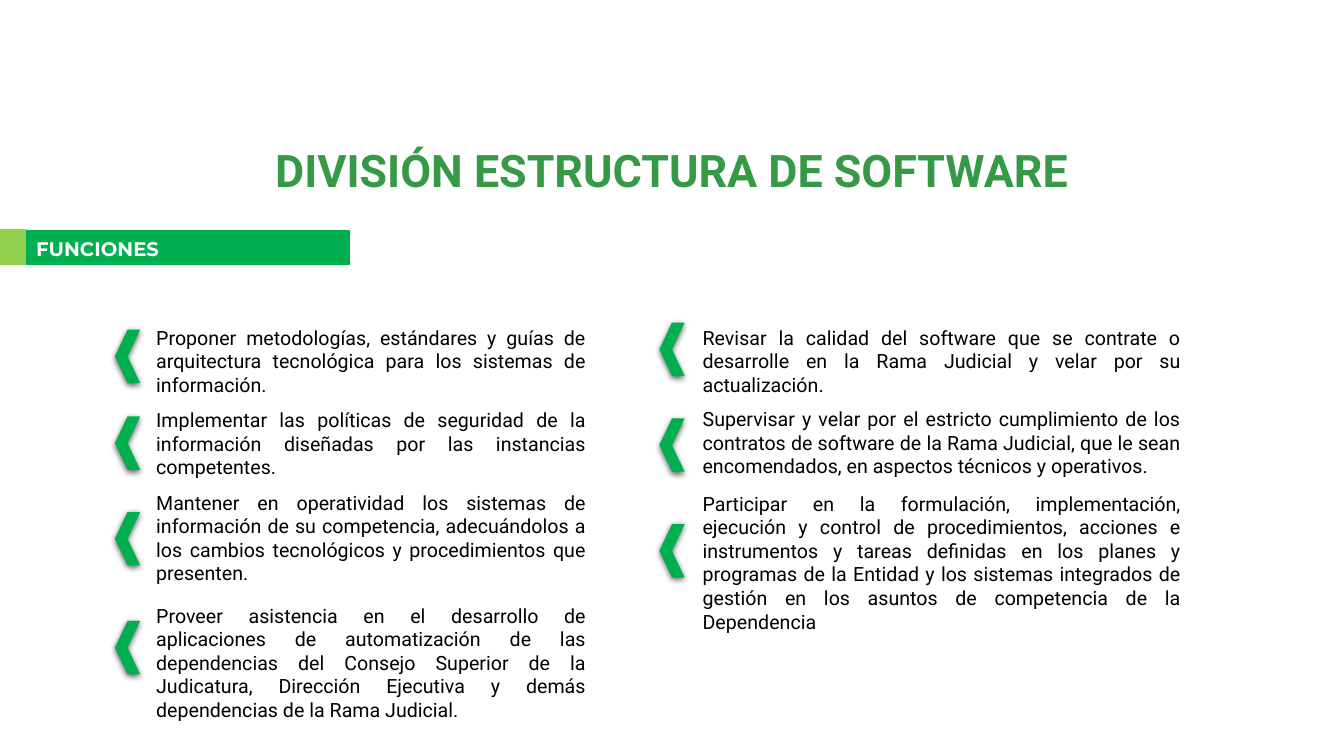
from dataclasses import dataclass

from lxml.etree import SubElement
from pptx import Presentation
from pptx.dml.color import RGBColor
from pptx.enum.shapes import MSO_SHAPE
from pptx.enum.text import MSO_ANCHOR, MSO_AUTO_SIZE, PP_ALIGN
from pptx.oxml.ns import qn
from pptx.util import Inches, Pt


@dataclass(frozen=True)
class Theme:
    green: str = "00B050"
    lime: str = "92D050"
    title: str = "359946"
    text: str = "000000"
    light: str = "FFFFFF"
    body_font: str = "Roboto"
    label_font: str = "Montserrat"
    title_size: int = 32
    body_size: int = 14


@dataclass(frozen=True)
class Box:
    """Left, top, width and height in percent of the slide's size."""
    left: float
    top: float
    width: float
    height: float

    def emu(self) -> tuple[int, int, int, int]:
        return (int(WIDTH * self.left / 100), int(HEIGHT * self.top / 100),
                int(WIDTH * self.width / 100), int(HEIGHT * self.height / 100))


@dataclass(frozen=True)
class Duty:
    top: float
    height: float
    chevron_top: float
    text: str


@dataclass(frozen=True)
class Column:
    chevron_left: float
    left: float
    width: float
    duties: tuple[Duty, ...]


THEME = Theme()
WIDTH, HEIGHT = Inches(13.33), Inches(7.5)
CHEVRON_WIDTH, CHEVRON_HEIGHT = 1.88, 7.07

COLUMNS = (
    Column(8.55, 10.88, 33.46, (
        Duty(42.4, 10.8, 43.6,
             "Proponer metodologías, estándares y guías de arquitectura tecnológica "
             "para los sistemas de información."),
        Duty(53.33, 10.8, 55.07,
             "Implementar las políticas de seguridad de la información diseñadas por "
             "las instancias competentes."),
        Duty(64.27, 13.87, 67.73,
             "Mantener en operatividad los sistemas de información de su competencia, "
             "adecuándolos a los cambios tecnológicos y procedimientos que presenten."),
        Duty(79.2, 13.87, 82.13,
             "Proveer asistencia en el desarrollo de aplicaciones de automatización de "
             "las dependencias del Consejo Superior de la Judicatura, Dirección "
             "Ejecutiva y demás dependencias de la Rama Judicial."),
    )),
    Column(49.06, 51.54, 37.06, (
        Duty(42.4, 7.6, 42.67,
             "Revisar la calidad del software que se contrate o desarrolle en la Rama "
             "Judicial y velar por su actualización."),
        Duty(53.2, 10.8, 55.33,
             "Supervisar y velar por el estricto cumplimiento de los contratos de "
             "software de la Rama Judicial, que le sean encomendados, en aspectos "
             "técnicos y operativos."),
        Duty(64.4, 17.07, 69.33,
             "Participar en la formulación, implementación, ejecución y control de "
             "procedimientos, acciones e instrumentos y tareas definidas en los planes "
             "y programas de la Entidad y los sistemas integrados de gestión en los "
             "asuntos de competencia de la Dependencia"),
    )),
)


def add_text(shapes, box: Box, text: str, color: str, align: PP_ALIGN,
             font: str = THEME.body_font, size: int = THEME.body_size,
             bold: bool = False):
    tf = shapes.add_textbox(*box.emu()).text_frame
    tf.word_wrap = True
    tf.auto_size = MSO_AUTO_SIZE.SHAPE_TO_FIT_TEXT
    p = tf.paragraphs[0]
    p.alignment = align
    r = p.add_run()
    r.text = text
    r.font.name, r.font.size, r.font.bold = font, Pt(size), bold
    r.font.color.rgb = RGBColor.from_string(color)
    return tf


def add_filled(shapes, kind: MSO_SHAPE, box: Box, color: str):
    s = shapes.add_shape(kind, *box.emu())
    s.shadow.inherit = False
    s.fill.solid()
    s.fill.fore_color.rgb = RGBColor.from_string(color)
    s.line.fill.background()
    return s


def add_bar(shapes, box: Box, color: str) -> None:
    s = add_filled(shapes, MSO_SHAPE.RECTANGLE, box, color)
    s.line.color.rgb = RGBColor.from_string(color)
    s.line.width = Pt(1)


def add_chevron(shapes, left: float, top: float) -> None:
    """Add a left-pointing chevron with a soft shadow below it."""
    s = add_filled(shapes, MSO_SHAPE.CHEVRON,
                   Box(left, top, CHEVRON_WIDTH, CHEVRON_HEIGHT), THEME.green)
    s.rotation = 180
    effects = s._element.spPr.find(qn("a:effectLst"))
    shadow = SubElement(effects, qn("a:outerShdw"), blurRad=str(Pt(4.5)),
                        dist=str(Pt(1.5)), dir="5400000", algn="ctr", rotWithShape="0")
    color = SubElement(shadow, qn("a:srgbClr"), val=THEME.text)
    SubElement(color, qn("a:alpha"), val="63000")


def add_title(shapes) -> None:
    tf = add_text(shapes, Box(0, 19.33, 100, 7.07), "DIVISIÓN ESTRUCTURA DE SOFTWARE",
                  THEME.title, PP_ALIGN.CENTER, size=THEME.title_size, bold=True)
    tf.auto_size = MSO_AUTO_SIZE.NONE
    tf.vertical_anchor = MSO_ANCHOR.MIDDLE
    tf.paragraphs[0].line_spacing = 0.9


def add_section_label(shapes) -> None:
    group = shapes.add_group_shape().shapes
    add_bar(group, Box(0, 30.4, 1.95, 4.53), THEME.lime)
    add_bar(group, Box(1.95, 30.53, 24.08, 4.4), THEME.green)
    add_text(group, Box(1.95, 30.67, 30, 4.53), "FUNCIONES", THEME.light,
             PP_ALIGN.LEFT, font=THEME.label_font, bold=True)


def add_column(shapes, column: Column) -> None:
    for duty in column.duties:
        add_text(shapes, Box(column.left, duty.top, column.width, duty.height),
                 duty.text, THEME.text, PP_ALIGN.JUSTIFY)
        add_chevron(shapes, column.chevron_left, duty.chevron_top)


def main() -> None:
    prs = Presentation()
    prs.slide_width, prs.slide_height = WIDTH, HEIGHT
    shapes = prs.slides.add_slide(prs.slide_layouts[6]).shapes
    for column in COLUMNS:
        add_column(shapes, column)
    add_title(shapes)
    add_section_label(shapes)
    prs.save("out.pptx")


if __name__ == "__main__":
    main()
